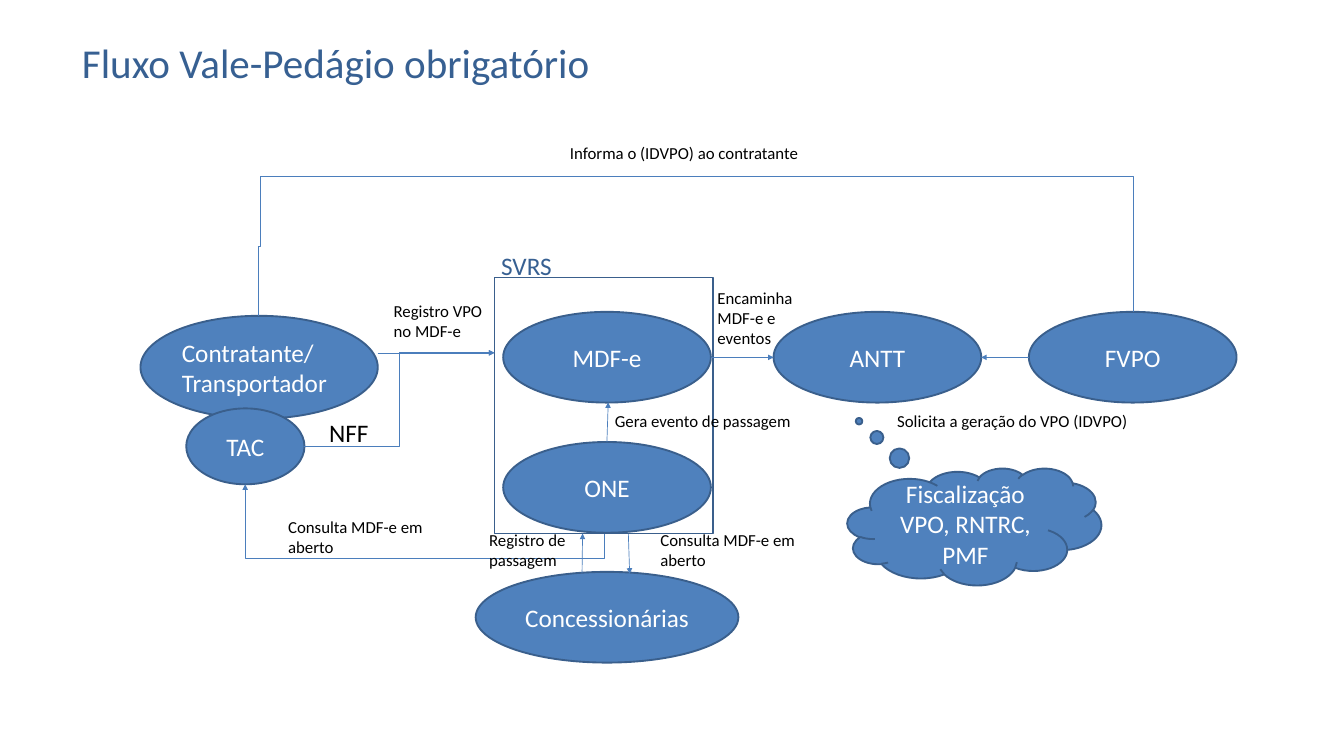
from lxml.etree import SubElement
from pptx import Presentation
from pptx.dml.color import RGBColor
from pptx.enum.shapes import MSO_CONNECTOR as Link, MSO_SHAPE as Preset
from pptx.enum.text import MSO_ANCHOR as Anchor, MSO_AUTO_SIZE as AutoSize, PP_ALIGN as Align
from pptx.oxml.ns import qn
from pptx.util import Cm, Pt

TITLE_BLUE = RGBColor(0x37, 0x60, 0x92)
FILL_BLUE = RGBColor(0x4F, 0x81, 0xBD)
OUTLINE_BLUE = RGBColor(0x3A, 0x5F, 0x8C)
ARROW_BLUE = RGBColor(0x4B, 0x7E, 0xBC)
WHITE = RGBColor(0xFF, 0xFF, 0xFF)
BLACK = RGBColor(0, 0, 0)

TITLE_ONLY = 5
NODE_SIZE = (7.85, 3.43)
NODE_TOP = 11.79
AXIS = 13.51  # height of the arrows between MDF-e, ANTT and FVPO


def set_attributes(target, values):
    for name, value in values.items():
        setattr(target, name, value)


def write_text(shape, text, size, color, align, **frame_format):
    """Fill a text frame; each line of text becomes a paragraph."""
    frame = shape.text_frame
    frame.text = text
    set_attributes(frame, frame_format)
    for paragraph in frame.paragraphs:
        paragraph.alignment = align
        set_attributes(paragraph.font, {"name": "Calibri", "size": Pt(size)})
        paragraph.font.color.rgb = color


def add_title(slide, text):
    title = slide.shapes.title
    set_attributes(title, {"left": Cm(1.27), "top": Cm(0.76),
                           "width": Cm(22.86), "height": Cm(3.18)})
    write_text(title, text, 44, TITLE_BLUE, Align.CENTER, word_wrap=True,
               auto_size=AutoSize.NONE, vertical_anchor=Anchor.MIDDLE)


def add_outlined(slide, preset, left, top, width, height):
    shape = slide.shapes.add_shape(preset, Cm(left), Cm(top), Cm(width), Cm(height))
    shape.shadow.inherit = False
    shape.line.color.rgb = OUTLINE_BLUE
    shape.line.width = Pt(2)
    return shape


def add_node(slide, text, left, top, width, height, preset=Preset.OVAL, align=Align.CENTER):
    shape = add_outlined(slide, preset, left, top, width, height)
    shape.fill.solid()
    shape.fill.fore_color.rgb = FILL_BLUE
    write_text(shape, text, 27, WHITE, align, word_wrap=True, vertical_anchor=Anchor.MIDDLE)
    return shape


def add_label(slide, text, left, top, width, height, size=18, color=BLACK, wrap=True):
    box = slide.shapes.add_textbox(Cm(left), Cm(top), Cm(width), Cm(height))
    write_text(box, text, size, color, Align.LEFT, word_wrap=wrap,
               auto_size=AutoSize.SHAPE_TO_FIT_TEXT)


def add_link(slide, start, end, kind=Link.STRAIGHT, arrow=True):
    points = [Cm(value) for value in (*start, *end)]
    link = slide.shapes.add_connector(kind, *points)
    link.line.color.rgb = ARROW_BLUE
    link.line.width = Pt(0.75)
    if arrow:
        SubElement(link.line._get_or_add_ln(), qn("a:tailEnd"), type="triangle")
    SubElement(link._element.spPr, qn("a:effectLst"))
    return link


def add_vertical_elbow(slide, start, end, rotation, preset="bentConnector3",
                       bend=None, arrow=False):
    """Elbow that leaves vertically: an elbow turned about its centre."""
    turn = 1 if rotation == 90 else -1
    center_x, center_y = (start[0] + end[0]) / 2, (start[1] + end[1]) / 2
    half_x = turn * (end[1] - start[1]) / 2
    half_y = -turn * (end[0] - start[0]) / 2
    link = add_link(slide, (center_x - half_x, center_y - half_y),
                    (center_x + half_x, center_y + half_y), Link.ELBOW, arrow)
    properties = link._element.spPr
    properties.find(qn("a:xfrm")).set("rot", str(rotation * 60000))
    geometry = properties.find(qn("a:prstGeom"))
    geometry.set("prst", preset)
    if bend is not None:
        SubElement(geometry.find(qn("a:avLst")), qn("a:gd"),
                   name="adj1", fmla=f"val {round(bend * 100000)}")


def main():
    presentation = Presentation()
    presentation.slide_width, presentation.slide_height = Cm(50.8), Cm(28.58)
    slide = presentation.slides.add_slide(presentation.slide_layouts[TITLE_ONLY])
    add_title(slide, "Fluxo Vale-Pedágio obrigatório")

    # Participants and systems
    add_node(slide, "Contratante/\nTransportador", 5.31, 11.94, 8.97, 3.89, align=Align.LEFT)
    for text, left, top in (("MDF-e", 19.02, NODE_TOP), ("ONE", 19.02, 16.71),
                            ("ANTT", 29.24, NODE_TOP), ("FVPO", 38.89, NODE_TOP)):
        add_node(slide, text, left, top, *NODE_SIZE)
    add_node(slide, "Concessionárias", 17.98, 21.62, 9.93, 3.43)
    add_node(slide, "TAC", 7.04, 15.44, 4.47, 2.87)

    # SVRS frame
    add_outlined(slide, Preset.RECTANGLE, 18.69, 10.49, 8.26, 9.68).fill.background()
    add_label(slide, "SVRS", 18.69, 9.35, 3.61, 1.42, 27, TITLE_BLUE)

    # Inspection cloud
    cloud = add_node(slide, "Fiscalização VPO, RNTRC, PMF", 32.03, 17.7, 9.6, 4.42,
                     Preset.CLOUD_CALLOUT)
    cloud.adjustments[0], cloud.adjustments[1] = -0.454, -0.902

    # Straight arrows
    for start, end in (
        ((14.27, 13.34), (18.69, 13.34)),
        ((22.94, 16.71), (22.99, 15.21)),
        ((22, 21.67), (22.02, 20.17)),
        ((23.75, 20.19), (23.8, 21.69)),
        ((38.89, AXIS), (37.08, AXIS)),
        ((26.87, AXIS), (29.24, AXIS)),
    ):
        add_link(slide, start, end)

    # Bent links: TAC to SVRS, ONE to TAC, FVPO back to the contractor
    add_link(slide, (11.51, 16.87), (18.69, 13.34), Link.ELBOW)
    add_vertical_elbow(slide, (22.83, 20.17), (9.27, 18.31), 90, bend=-0.513, arrow=True)
    add_vertical_elbow(slide, (9.83, 6.68), (9.78, 11.94), 90)
    add_vertical_elbow(slide, (42.82, NODE_TOP), (9.83, 6.68), 270, "bentConnector2")

    # Link captions
    for text, *place in (
        ("Registro VPO no MDF-e", 14.63, 11.25, 4.19, 1.8),
        ("Registro de passagem", 18.24, 19.91, 3.78, 1.8),
        ("Consulta MDF-e em aberto", 24.71, 19.91, 5.84, 1.8),
        ("Consulta MDF-e em aberto", 10.64, 19.41, 5.84, 1.8),
        ("Gera evento de passagem", 22.99, 15.42, 7.57, 1.02),
        ("Encaminha MDF-e e eventos", 26.87, 10.74, 4.52, 2.57),
        ("Solicita a geração do VPO (IDVPO)", 33.66, 15.42, 11.15, 1.02),
        ("Informa o (IDVPO) ao contratante", 21.29, 5.26, 11.15, 1.02),
    ):
        add_label(slide, text, *place)
    add_label(slide, "NFF", 12.19, 15.65, 2.01, 1.42, 27, wrap=False)

    presentation.save("out.pptx")


if __name__ == "__main__":
    main()
